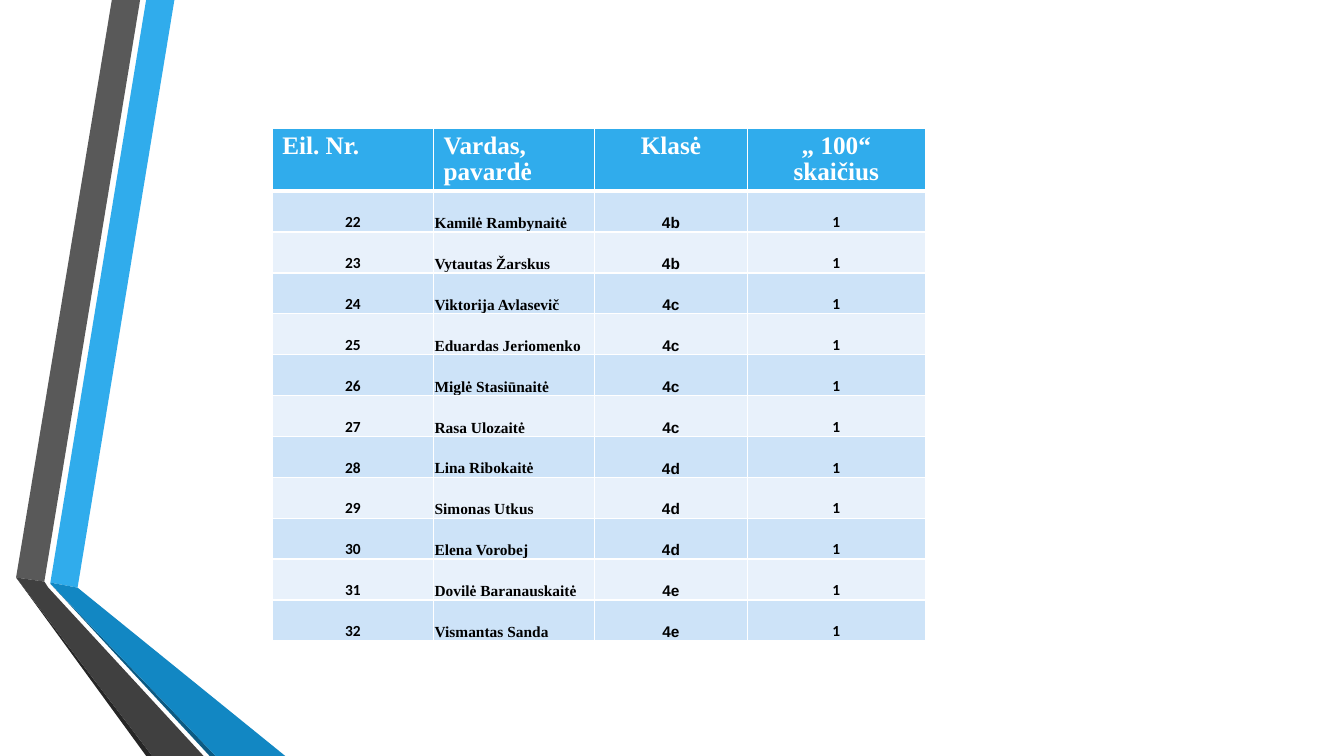
import pptx
import pptx.util
import pptx.dml.color
import pptx.enum.text
import pptx.oxml
import pptx.oxml.ns
from dataclasses import dataclass

Inches = pptx.util.Inches
Align = pptx.enum.text.PP_ALIGN
Anchor = pptx.enum.text.MSO_ANCHOR


@dataclass(frozen=True)
class Theme:
    blue: str = "30ACEC"
    deep: str = "1287C3"
    navy: str = "0C5A82"
    gray: str = "595959"
    dark: str = "404040"
    coal: str = "262626"
    white: str = "FFFFFF"
    black: str = "000000"
    bands: tuple = ("CDE3F8", "E8F1FB")
    serif: str = "Times New Roman"
    sans: str = "Arial"
    plain: str = "Calibri"
    head: int = 18
    body: int = 11
    thin: int = 1
    thick: int = 3


class Deck:
    def __init__(self, theme):
        self.theme = theme
        self.file = pptx.Presentation()
        self.file.slide_width = Inches(13.33)
        self.file.slide_height = Inches(7.5)
        self.slide = self.file.slides.add_slide(self.file.slide_layouts[6])

    def paint(self, fill, color):
        fill.solid()
        fill.fore_color.rgb = pptx.dml.color.RGBColor.from_string(color)

    def ribbon(self, color, points):
        points = [(Inches(x), Inches(y)) for x, y in points]
        form = self.slide.shapes.build_freeform(*points[0])
        form.add_line_segments(points[1:], close=True)
        shape = form.convert_to_shape()
        shape.shadow.inherit = False
        shape.line.fill.background()
        self.paint(shape.fill, color)

    def border(self, cell, top, bottom):
        props = cell._tc.get_or_add_tcPr()
        sides = {"L": self.theme.thin, "R": self.theme.thin, "T": top, "B": bottom}
        for side, width in sides.items():
            props.append(pptx.oxml.parse_xml(
                f'<a:ln{side} {pptx.oxml.ns.nsdecls("a")} w="{pptx.util.Pt(width)}">'
                f'<a:solidFill><a:srgbClr val="{self.theme.white}"/></a:solidFill>'
                f'</a:ln{side}>'))

    def label(self, cell, text, font, size, color, align):
        cell.text_frame.text = text
        para = cell.text_frame.paragraphs[0]
        para.alignment = align
        style = para.runs[0].font
        style.name, style.size, style.bold = font, pptx.util.Pt(size), True
        self.paint(style.fill, color)
        return para

    def table(self, place, widths, heads, rows):
        look = self.theme
        grid = self.slide.shapes.add_table(
            len(rows) + 1, len(heads), *map(Inches, place)).table
        for column, width in zip(grid.columns, widths):
            column.width = Inches(width)

        # Header row
        aligns = (Align.LEFT, Align.LEFT, Align.CENTER, Align.CENTER)
        for col, (text, align) in enumerate(zip(heads, aligns)):
            cell = grid.cell(0, col)
            self.border(cell, look.thin, look.thick)
            self.paint(cell.fill, look.blue)
            para = self.label(cell, text, look.serif, look.head, look.white, align)
            para.line_spacing = 0.95

        # Banded body rows
        fonts = (look.plain, look.serif, look.sans, look.plain)
        aligns = (Align.CENTER, Align.LEFT, Align.CENTER, Align.CENTER)
        for row, texts in enumerate(rows, 1):
            for col, (text, font, align) in enumerate(zip(texts, fonts, aligns)):
                cell = grid.cell(row, col)
                self.border(cell, look.thick if row == 1 else look.thin, look.thin)
                self.paint(cell.fill, look.bands[(row - 1) % 2])
                cell.margin_left = cell.margin_right = cell.margin_top = Inches(0.01)
                cell.margin_bottom = 0
                cell.vertical_anchor = Anchor.BOTTOM
                self.label(cell, text, font, look.body, look.black, align)


def main():
    theme = Theme()
    deck = Deck(theme)

    # Folded ribbons on the left
    deck.ribbon(theme.blue, [(0.5, 5.78), (0.77, 5.83), (1.73, 0), (1.45, 0)])
    deck.ribbon(theme.gray, [(1.39, 0), (1.11, 0), (0.16, 5.73), (0.44, 5.77)])
    deck.ribbon(theme.coal, [(0.16, 5.73), (1.45, 7.5), (1.51, 7.5)])
    deck.ribbon(theme.navy, [(0.5, 5.79), (2.08, 7.5), (2.14, 7.5)])
    deck.ribbon(theme.deep, [(0.5, 5.79), (2.14, 7.5), (2.83, 7.5),
                             (0.77, 5.83), (0.5, 5.78)])
    deck.ribbon(theme.dark, [(2.02, 7.5), (0.48, 5.83), (0.44, 5.77),
                             (0.16, 5.73), (1.51, 7.5)])

    # Pupils' results
    pupils = [
        ("Kamilė Rambynaitė", "4b"),
        ("Vytautas Žarskus", "4b"),
        ("Viktorija Avlasevič", "4c"),
        ("Eduardas Jeriomenko", "4c"),
        ("Miglė Stasiūnaitė", "4c"),
        ("Rasa Ulozaitė", "4c"),
        ("Lina Ribokaitė", "4d"),
        ("Simonas Utkus", "4d"),
        ("Elena Vorobej", "4d"),
        ("Dovilė Baranauskaitė", "4e"),
        ("Vismantas Sanda", "4e"),
    ]
    rows = [(str(num), name, group, "1")
            for num, (name, group) in enumerate(pupils, 22)]
    deck.table((2.7, 1.27, 6.47, 4.87), (1.6, 1.6, 1.51, 1.77),
               ("Eil. Nr.", "Vardas, pavardė", "Klasė", "„ 100“ skaičius"), rows)

    deck.file.save("out.pptx")


if __name__ == "__main__":
    main()
